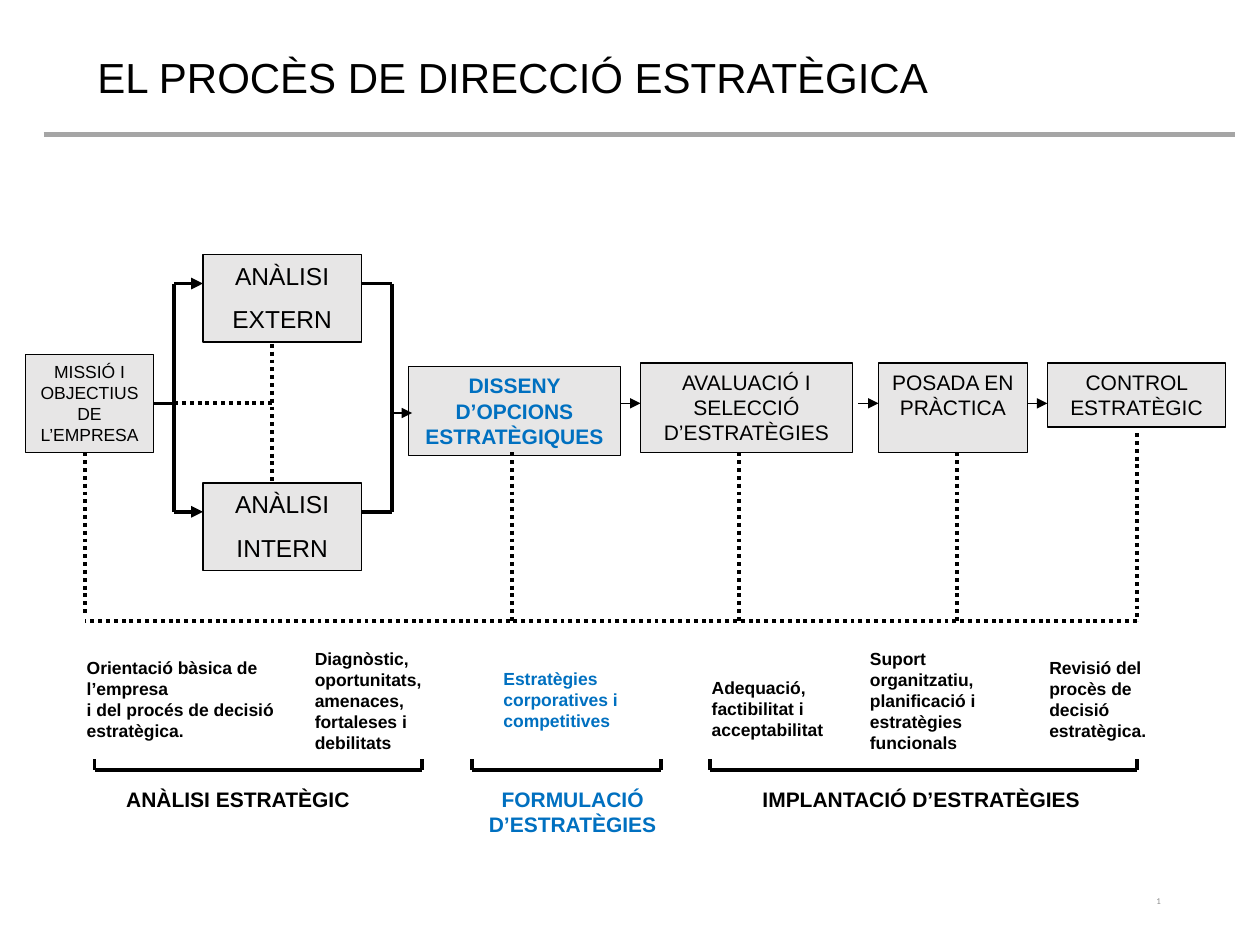
from lxml.etree import SubElement
from pptx import Presentation
from pptx.dml.color import RGBColor
from pptx.enum.dml import MSO_LINE as Dash
from pptx.enum.shapes import MSO_CONNECTOR as Link, MSO_SHAPE as Shape
from pptx.enum.text import MSO_ANCHOR as Anchor, PP_ALIGN as Align
from pptx.oxml.ns import qn
from pptx.util import Pt

BLACK = RGBColor(0x00, 0x00, 0x00)
BLUE = RGBColor(0x00, 0x70, 0xC0)
PALE = RGBColor(0xE7, 0xE6, 0xE6)
RULE_GREY = RGBColor(0xA5, 0xA5, 0xA5)
NUMBER_GREY = RGBColor(0x8C, 0x8C, 0x8C)


class Diagram:
    """Holds the text style and the current slide."""

    font = "Arial"

    def __init__(self, page):
        self.page = page

    def set_text(self, frame, text, size, color=BLACK, bold=False,
                 align=Align.LEFT, gap=0, font=None):
        frame.text = text
        for index, para in enumerate(frame.paragraphs):
            para.alignment = align
            para.space_before = Pt(gap if index else 0)
            para.font.name = font or self.font
            para.font.size = Pt(size)
            para.font.bold = bold
            para.font.color.rgb = color

    def title(self, left, top, width, height, text):
        box = self.page.shapes.title
        box.left, box.top, box.width, box.height = map(
            Pt, (left, top, width, height))
        box.text_frame.vertical_anchor = Anchor.MIDDLE
        self.set_text(box.text_frame, text, 24)

    def step(self, left, top, width, height, text, size=12, **style):
        box = self.page.shapes.add_shape(
            Shape.RECTANGLE, Pt(left), Pt(top), Pt(width), Pt(height))
        box.shadow.inherit = False
        box.fill.solid()
        box.fill.fore_color.rgb = PALE
        box.line.color.rgb = BLACK
        box.line.width = Pt(0.75)
        box.text_frame.word_wrap = True
        box.text_frame.vertical_anchor = Anchor.TOP
        self.set_text(box.text_frame, text, size, align=Align.CENTER, **style)
        return box

    def label(self, left, top, width, height, text, size=10, wrap=True,
              anchor=Anchor.TOP, bold=True, **style):
        box = self.page.shapes.add_textbox(
            Pt(left), Pt(top), Pt(width), Pt(height))
        box.text_frame.word_wrap = wrap
        box.text_frame.vertical_anchor = anchor
        self.set_text(box.text_frame, text, size, bold=bold, **style)

    def line(self, x1, y1, x2, y2, weight=2.25, color=BLACK,
             dotted=False, arrow=False):
        link = self.page.shapes.add_connector(
            Link.STRAIGHT, Pt(x1), Pt(y1), Pt(x2), Pt(y2))
        link.line.color.rgb = color
        link.line.width = Pt(weight)
        if dotted:
            link.line.dash_style = Dash.ROUND_DOT
        outline = link._element.spPr
        if arrow:
            SubElement(outline.get_or_add_ln(), qn("a:tailEnd"),
                       type="triangle")
        SubElement(outline, qn("a:effectLst"))
        return link

    def bracket(self, left, right, base=440, rise=6):
        self.line(left, base, right, base)
        for x in (left, right):
            self.line(x, base, x, base - rise)


def main():
    deck = Presentation()
    deck.slide_width, deck.slide_height = Pt(720), Pt(540)
    diagram = Diagram(deck.slides.add_slide(deck.slide_layouts[5]))

    # Heading
    diagram.line(25, 77, 705.5, 77, weight=3, color=RULE_GREY)
    diagram.title(48.5, 26, 601, 36, "EL PROCÈS DE DIRECCIÓ ESTRATÈGICA")

    # Process steps
    mission = diagram.step(14.4, 202.5, 73.5, 56,
                           "MISSIÓ I OBJECTIUS DE L’EMPRESA", size=10)
    diagram.step(233.5, 209.5, 121, 51, "DISSENY D’OPCIONS\nESTRATÈGIQUES",
                 color=BLUE, bold=True)
    for left, width, height, text in (
            (366, 121, 51, "AVALUACIÓ I SELECCIÓ D’ESTRATÈGIES"),
            (502, 85, 51, "POSADA EN PRÀCTICA"),
            (598.5, 102, 36.5, "CONTROL ESTRATÈGIC")):
        diagram.step(left, 207.5, width, height, text)

    # External and internal analysis, with their branches
    fork, join, flow = 99.5, 224, 230.5
    upper, lower = 162, 292.5
    for branch, text in ((upper, "ANÀLISI\nEXTERN"),
                         (lower, "ANÀLISI\nINTERN")):
        diagram.step(116, branch - 16.5, 90.5, 50, text, size=14, gap=8)
        diagram.line(fork, branch, 116, branch, arrow=True)
        diagram.line(206.5, branch, join, branch)
    for x in (fork, join):
        diagram.line(x, upper, x, lower)
    stem = diagram.line(88, flow, fork, flow, weight=1.5)
    stem.begin_connect(mission, 3)
    diagram.line(fork, flow, 155.5, flow, dotted=True)
    diagram.line(155.5, 196.5, 155.5, 275.5, dotted=True)

    # Arrows between steps
    for start, end, y in ((join, 235.5, 236), (354.5, 366, flow),
                          (490.5, 502, flow), (587, 598.5, flow)):
        diagram.line(start, y, end, y, weight=0.75, arrow=True)

    # Dotted feedback rail
    rail = 355
    for x, top, bottom in ((48.5, 258.5, 350.5), (292.5, 258.5, rail),
                           (422.5, 258.5, rail), (547, 258.5, rail),
                           (649.5, 247.5, rail)):
        diagram.line(x, top, x, bottom, dotted=True)
    diagram.line(649.5, rail, 48.5, rail, dotted=True)

    # Notes on each step
    for left, top, width, height, text, color in (
            (42.5, 372, 124.5, 55.5, "Orientació bàsica de l’empresa\n"
             "i del procés de decisió estratègica.", BLACK),
            (172.8, 366.5, 85, 67, "Diagnòstic, oportunitats, amenaces, "
             "fortaleses i debilitats", BLACK),
            (280.6, 378, 85, 43,
             "Estratègies corporatives i competitives", BLUE),
            (399.6, 383.5, 85, 43,
             "Adequació, factibilitat i acceptabilitat", BLACK),
            (490, 366.5, 85, 67, "Suport organitzatiu, planificació i "
             "estratègies funcionals", BLACK),
            (592.5, 372, 85, 55.5,
             "Revisió del\nprocès de\ndecisió\nestratègica.", BLACK)):
        diagram.label(left, top, width, height, text, color=color)

    # Phases
    for left, right in ((54, 241), (269.5, 377.5), (405.5, 649.5)):
        diagram.bracket(left, right)
    diagram.label(65, 446, 151, 21.5, "ANÀLISI ESTRATÈGIC", size=12)
    diagram.label(263.5, 446, 127.5, 36, "FORMULACIÓ\nD’ESTRATÈGIES",
                  size=12, color=BLUE, align=Align.CENTER)
    diagram.label(427.5, 446, 198, 21.5, "IMPLANTACIÓ D’ESTRATÈGIES",
                  size=12, wrap=False, align=Align.CENTER)

    # Page number
    diagram.label(508.5, 500.5, 162, 29, "1", size=5.1, bold=False,
                  color=NUMBER_GREY, font="Calibri", align=Align.RIGHT,
                  anchor=Anchor.MIDDLE)

    deck.save("out.pptx")


if __name__ == "__main__":
    main()
